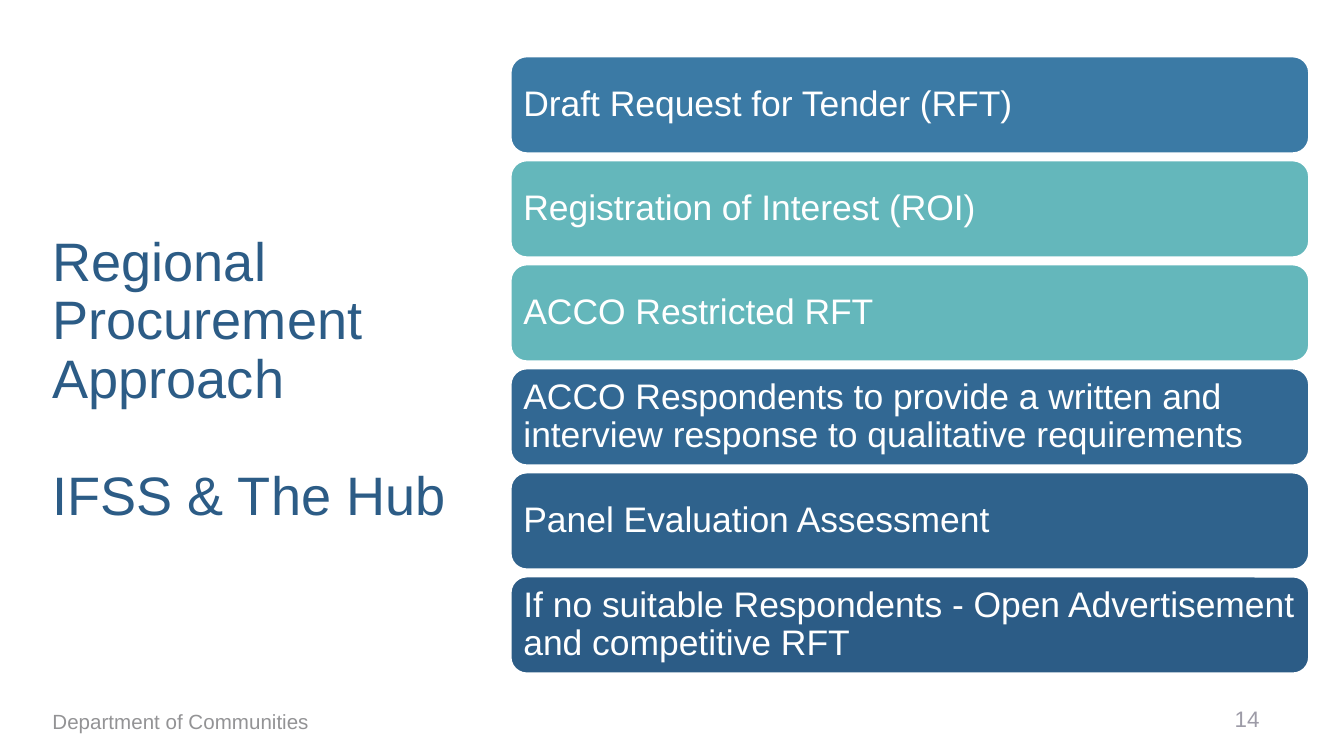
from pptx import Presentation
from pptx.dml.color import RGBColor
from pptx.enum.shapes import MSO_SHAPE
from pptx.enum.text import MSO_ANCHOR, MSO_AUTO_SIZE, PP_ALIGN
from pptx.util import Inches, Pt

# Content
TITLE_LINES = ["Regional Procurement Approach", "IFSS & The Hub"]
STEPS = [
    ("Draft Request for Tender (RFT)", "3B7AA5"),
    ("Registration of Interest (ROI)", "64B7BB"),
    ("ACCO Restricted RFT", "64B7BB"),
    ("ACCO Respondents to provide a written and interview response "
     "to qualitative requirements", "326893"),
    ("Panel Evaluation Assessment", "2F628C"),
    ("If no suitable Respondents - Open Advertisement and competitive RFT", "2C5C86"),
]
# text, left, top, width, height, size, colour, alignment, line spacing
FOOTERS = [
    ("Department of Communities", 0.05, 5.22, 2.59, 0.3, 11, "939395", PP_ALIGN.CENTER, 1.0),
    ("14", 7.22, 5.21, 2.25, 0.3, 12, "9D9BA7", PP_ALIGN.RIGHT, 0.9),
]

# Layout of the step bars
STEP_LEFT, STEP_WIDTH, STEP_HEIGHT = 3.8, 5.94, 0.72
FIRST_TOP, LAST_TOP = 0.42, 4.29
STEP_PITCH = (LAST_TOP - FIRST_TOP) / (len(STEPS) - 1)
STEP_MARGIN = Inches(0.06)


def colour(hex_string):
    return RGBColor.from_string(hex_string)


def place(shape, left, top, width, height):
    shape.left, shape.top = Inches(left), Inches(top)
    shape.width, shape.height = Inches(width), Inches(height)


def write(shape, lines, size, hex_string, alignment=PP_ALIGN.LEFT, gap=0, spacing=0.9):
    frame = shape.text_frame
    frame.word_wrap = True
    frame.auto_size = MSO_AUTO_SIZE.NONE
    frame.vertical_anchor = MSO_ANCHOR.MIDDLE
    for index, line in enumerate(lines):
        paragraph = frame.add_paragraph() if index else frame.paragraphs[0]
        paragraph.alignment = alignment
        paragraph.line_spacing = spacing
        if index:
            paragraph.space_before = Pt(gap)
        run = paragraph.add_run()
        run.text = line
        run.font.name = "Arial"
        run.font.size = Pt(size)
        run.font.color.rgb = colour(hex_string)


# Widescreen slide, 16:9
presentation = Presentation()
presentation.slide_width = Inches(10)
presentation.slide_height = presentation.slide_width * 9 // 16
slide = presentation.slides.add_slide(presentation.slide_layouts[5])

# Title
title = slide.shapes.title
place(title, 0.29, 0.98, 3.3, 3.71)
write(title, TITLE_LINES, 29, "2C5C86", gap=31.5)

# Procurement steps
for index, (text, fill) in enumerate(STEPS):
    bar = slide.shapes.add_shape(
        MSO_SHAPE.ROUNDED_RECTANGLE, Inches(STEP_LEFT),
        Inches(FIRST_TOP + index * STEP_PITCH), Inches(STEP_WIDTH), Inches(STEP_HEIGHT))
    bar.shadow.inherit = False
    bar.fill.solid()
    bar.fill.fore_color.rgb = colour(fill)
    bar.line.color.rgb = colour("FFFFFF")
    bar.line.width = Pt(1)
    frame = bar.text_frame
    frame.margin_left = frame.margin_right = STEP_MARGIN
    frame.margin_top = frame.margin_bottom = STEP_MARGIN
    write(bar, [text], 19, "FFFFFF")

# Footer and slide number
for text, left, top, width, height, size, hex_string, alignment, spacing in FOOTERS:
    box = slide.shapes.add_textbox(Inches(left), Inches(top), Inches(width), Inches(height))
    write(box, [text], size, hex_string, alignment, spacing=spacing)

presentation.save("out.pptx")
